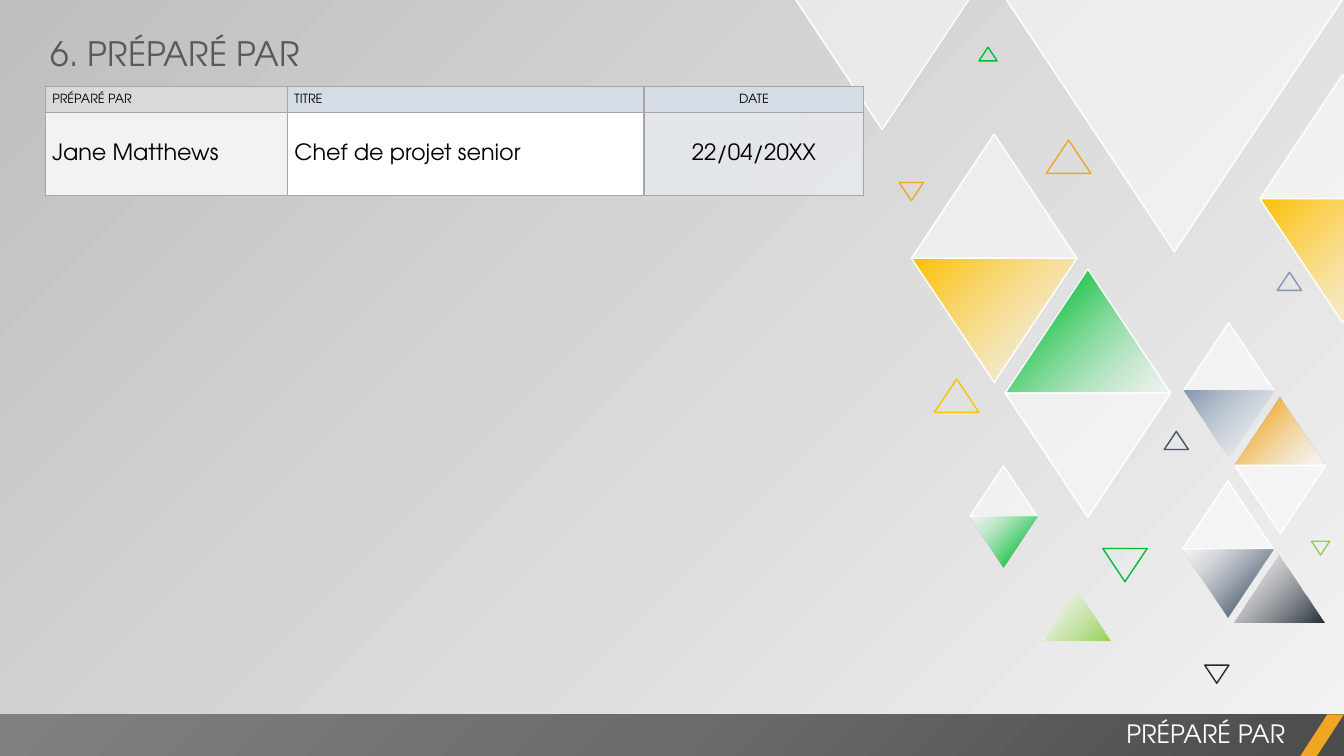
import pptx
import pptx.util
import pptx.dml.color
import pptx.enum.shapes
import pptx.enum.text
import pptx.oxml
import pptx.oxml.ns

Cm, Pt = pptx.util.Cm, pptx.util.Pt
SHAPE = pptx.enum.shapes.MSO_SHAPE
ALIGN = pptx.enum.text.PP_ALIGN
ANCHOR = pptx.enum.text.MSO_ANCHOR
FIT = pptx.enum.text.MSO_AUTO_SIZE
FONT = "TeX Gyre Adventor"
W, H = 33.87, 19.05
GREEN, YELLOW, ORANGE, LIME = "00BD32", "FFC000", "F0A622", "92D050"
STEEL, SLATE, NIGHT = "8497B0", "44546A", "222A35"
DIAGONAL = '<a:lin ang="13500000" scaled="0"/>'
CORNER = '<a:path path="circle"><a:fillToRect l="100000" t="100000"/></a:path>'
PALE = [(0, "FFFFFF", 50)]


def rgb(value):
    """Turn a hex string into a colour."""
    return pptx.dml.color.RGBColor.from_string(value)


def xml(text):
    """Parse a DrawingML fragment."""
    head, rest = text.split(">", 1)
    return pptx.oxml.parse_xml(f"{head} {pptx.oxml.ns.nsdecls('a')}>{rest}")


def fade_from(color):
    """Give the stops that lead from a colour to clear white."""
    return [(0, color, 100), (100, "FFFFFF", 50)]


def fade_to(color):
    """Give the stops that lead from clear white to a colour."""
    return [(0, "FFFFFF", 50), (82, color, 100)]


def paint(fill, props, stops, shade=DIAGONAL):
    """Fill with one colour or a gradient, each stop having its opacity."""
    fill.solid()
    colors = [f'<a:srgbClr val="{c}"><a:alpha val="{a * 1000}"/></a:srgbClr>' for _, c, a in stops]
    if len(stops) == 1:
        new = f"<a:solidFill>{colors[0]}</a:solidFill>"
    else:
        marks = "".join(f'<a:gs pos="{s[0] * 1000}">{c}</a:gs>' for s, c in zip(stops, colors))
        new = f'<a:gradFill rotWithShape="1"><a:gsLst>{marks}</a:gsLst>{shade}</a:gradFill>'
    old = props.find(pptx.oxml.ns.qn("a:solidFill"))
    props.replace(old, xml(new))


def write(p, text, size, color, align=ALIGN.LEFT):
    """Set and format the text of a paragraph."""
    p.text, p.alignment = text, align
    font = p.runs[0].font
    font.name, font.size, font.color.rgb = FONT, Pt(size), rgb(color)


def add_block(shapes, kind, x, y, w, h, stops=None, line=None, shade=DIAGONAL):
    """Add a preset shape with its fill and line."""
    sp = shapes.add_shape(kind, Cm(x), Cm(y), Cm(w), Cm(h))
    sp.shadow.inherit = False
    if stops:
        paint(sp.fill, sp._element.spPr, stops, shade)
    else:
        sp.fill.background()
    if line:
        sp.line.color.rgb, sp.line.width = rgb(line), Pt(1)
    else:
        sp.line.fill.background()
    return sp


def add_triangle(shapes, x, y, w, down, stops=None, line=None):
    """Add a triangle three quarters as high as wide."""
    sp = add_block(shapes, SHAPE.ISOSCELES_TRIANGLE, x, y, w, 0.75 * w, stops, line)
    sp.rotation = 180 if down else 0


def add_diamond(shapes, x, y, w, upper, lower):
    """Stack two triangles; small coloured halves have no outline."""
    for down, stops in enumerate((upper, lower)):
        line = "FFFFFF" if stops == PALE or w > 4 else None
        add_triangle(shapes, x, y + down * 0.75 * w, w, down, stops, line)


def add_pattern(s, x, y):
    """Scatter the triangles from the given corner."""
    shapes = s.shapes.add_group_shape().shapes
    big, medium, small = 4.17, 2.29, 1.7
    for dx, dy, w, upper, lower in [
        (2.95, 3.43, big, PALE, fade_from(YELLOW)),
        (5.31, 6.83, big, fade_to(GREEN), PALE),
        (9.78, 12.17, medium, PALE, fade_to(SLATE)),
        (9.8, 8.18, medium, PALE, fade_from(STEEL)),
        (11.1, 10.06, medium, fade_to(ORANGE), PALE),
        (4.42, 11.79, small, PALE, fade_to(GREEN)),
        (11.73, 1.93, big, PALE, fade_from(YELLOW)),
    ]:
        add_diamond(shapes, x + dx, y + dy, w, upper, lower)
    for dx, w in [(0, 4.42), (5.31, 8.53)]:
        add_triangle(shapes, x + dx, y, w, True, PALE, "FFFFFF")
    for dx, dy, w, color in [(11.07, 14.02, medium, NIGHT), (6.27, 14.91, small, LIME)]:
        add_triangle(shapes, x + dx, y + dy, w, False, fade_from(color))
    for dx, dy, w, down, color in [
        (7.77, 13.87, 1.12, True, GREEN),
        (3.53, 9.6, 1.12, False, YELLOW),
        (6.35, 3.58, 1.12, False, ORANGE),
        (9.32, 10.92, 0.61, False, SLATE),
        (10.34, 16.81, 0.61, True, NIGHT),
        (2.64, 4.65, 0.61, True, ORANGE),
        (12.17, 6.91, 0.61, False, STEEL),
        (4.65, 1.24, 0.46, False, GREEN),
        (13.03, 13.69, 0.46, True, LIME),
    ]:
        add_triangle(shapes, x + dx, y + dy, w, down, line=color)


def add_footer(s, x, y, w, h):
    """Add the dark bar, its accent and its label."""
    greys = [(0, "4C4C4C", 100), (50, "6B6B6B", 100), (100, "808080", 100)]
    add_block(s.shapes, SHAPE.RECTANGLE, x, y, w, h, greys, shade=CORNER)
    accent = add_block(s.shapes, SHAPE.PARALLELOGRAM, x + w - 1.1, y, 1.1, h, [(0, ORANGE, 100)])
    accent.adjustments[0] = 0.65
    tf = s.shapes.add_textbox(Cm(x + w - 20.53), Cm(y - 0.03), Cm(19.3), Cm(1.02)).text_frame
    tf.word_wrap, tf.auto_size = True, FIT.SHAPE_TO_FIT_TEXT
    write(tf.paragraphs[0], "PRÉPARÉ PAR", 18, "FFFFFF", ALIGN.RIGHT)


def format_cell(cell, text, size, align, color, opacity):
    """Write, fill and frame one table cell."""
    cell.vertical_anchor = ANCHOR.MIDDLE
    cell.margin_left = cell.margin_right = Cm(0.18)
    cell.margin_top = cell.margin_bottom = 0
    p = cell.text_frame.paragraphs[0]
    write(p, text, size, "000000", align)
    p.line_spacing, p.space_before, p.space_after = 1.07, Pt(3), Pt(3)
    props = cell._tc.get_or_add_tcPr()
    paint(cell.fill, props, [(0, color, opacity)])
    for i, side in enumerate("LRTB"):
        border = f'<a:ln{side} w="12700"><a:solidFill><a:srgbClr val="A6A6A6"/></a:solidFill></a:ln{side}>'
        props.insert(i, xml(border))


def add_author_table(s, x, y):
    """Add the table of author, job title and date."""
    widths, heights = (6.1, 8.99, 5.54), (0.66, 2.08)
    frame = s.shapes.add_table(2, 3, Cm(x), Cm(y), Cm(sum(widths)), Cm(sum(heights)))
    table = frame.table
    table.first_row = table.horz_banding = False
    for col, w in zip(table.columns, widths):
        col.width = Cm(w)
    rows = [
        (9, [("PRÉPARÉ PAR", "D9D9D9", 100), ("TITRE", "D6DCE5", 100), ("DATE", "D6DCE5", 100)]),
        (16, [("Jane Matthews", "F2F2F2", 100), ("Chef de projet senior", "FFFFFF", 100),
              ("22/04/20XX", "EAEEF3", 70)]),
    ]
    for r, (size, cells) in enumerate(rows):
        table.rows[r].height = Cm(heights[r])
        for c, (text, color, opacity) in enumerate(cells):
            align = ALIGN.CENTER if c == 2 else ALIGN.LEFT
            format_cell(table.cell(r, c), text, size, align, color, opacity)


def set_title(s, x, y, w, h):
    """Place and format the slide title."""
    title = s.shapes.title
    title.left, title.top, title.width, title.height = Cm(x), Cm(y), Cm(w), Cm(h)
    tf = title.text_frame
    write(tf.paragraphs[0], "6. PRÉPARÉ PAR", 24, "595959")
    tf.word_wrap, tf.auto_size = False, FIT.SHAPE_TO_FIT_TEXT
    tf.vertical_anchor = ANCHOR.TOP


def add_author_slide(prs):
    """Build the slide that names the author."""
    s = prs.slides.add_slide(prs.slide_layouts[5])
    fill = s.background.fill
    fill.solid()
    props = s._element.find(".//" + pptx.oxml.ns.qn("p:bgPr"))
    paint(fill, props, [(0, "F2F2F2", 40), (100, "BFBFBF", 100)])
    add_pattern(s, 20.02, -0.05)
    add_footer(s, 0, 18, W, H - 18)
    add_author_table(s, 1.14, 2.18)
    set_title(s, 1.02, 0.69, 6.93, 1.27)


def main():
    """Create and save the presentation."""
    prs = pptx.Presentation()
    prs.slide_width, prs.slide_height = Cm(W), Cm(H)
    add_author_slide(prs)
    prs.save("out.pptx")


if __name__ == "__main__":
    main()
